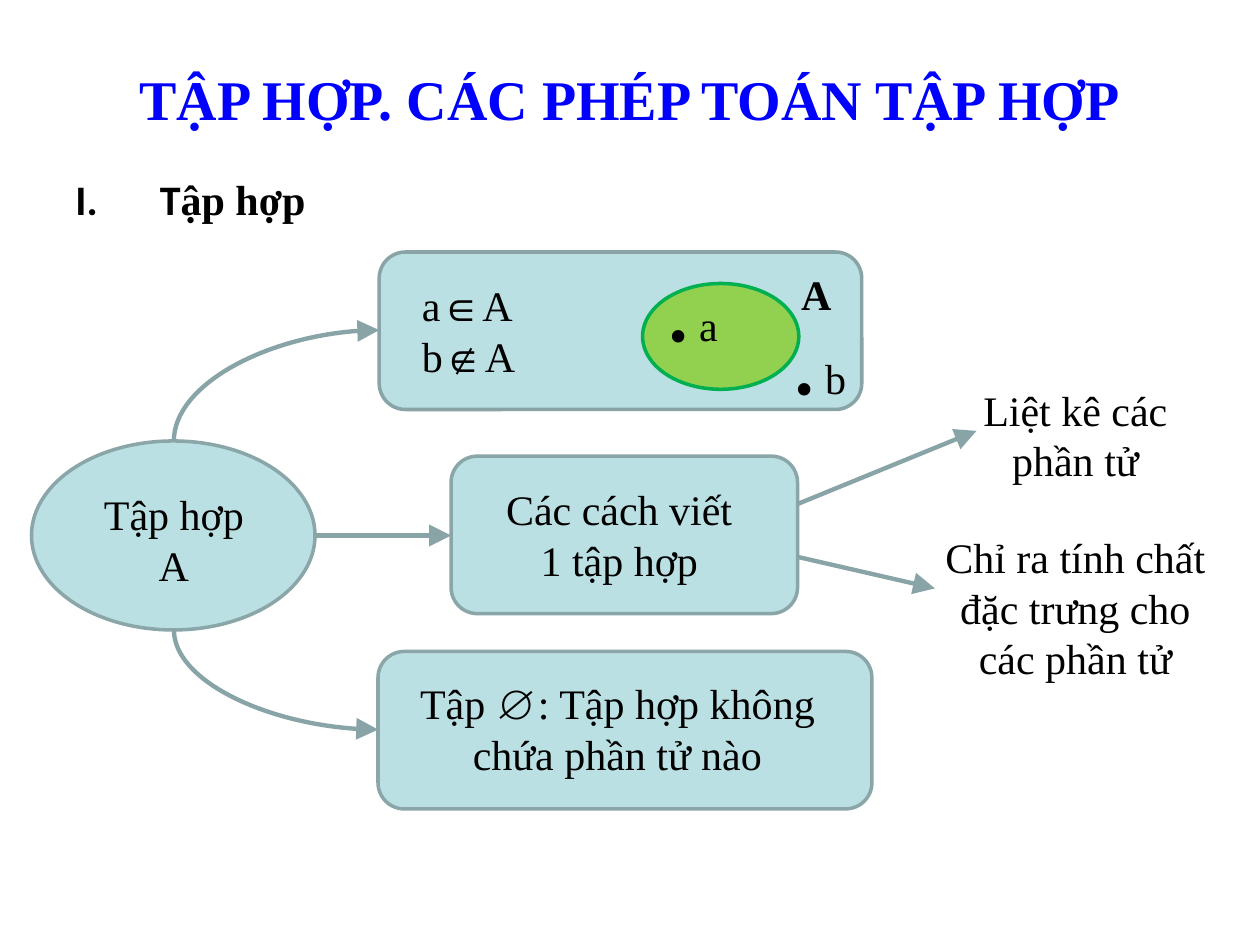
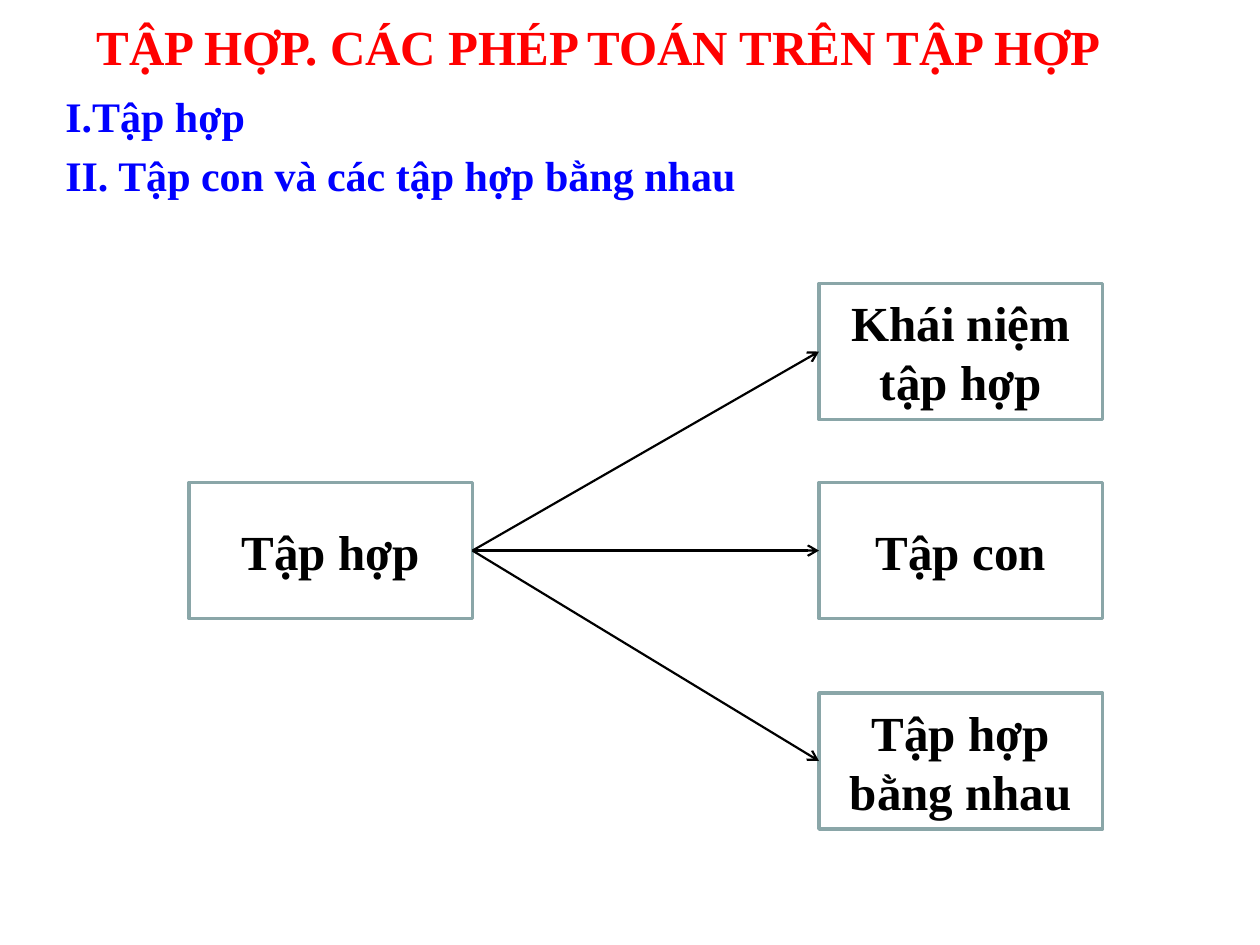
from pptx import Presentation
from pptx import util as u
from pptx.dml.color import RGBColor
from pptx.enum import shapes, text
from pptx.oxml.ns import qn
from lxml import etree

FONT = "Times New Roman"
COLORS = {
    "black": "000000", "blue": "0000FF", "red": "FF0000",
    "pale": "BBE0E3", "edge": "8AA6A8", "arrow": "89A4A7",
    "green": "92D050", "dark_green": "00B050",
}
ROUND = shapes.MSO_SHAPE.ROUNDED_RECTANGLE
OVAL = shapes.MSO_SHAPE.OVAL
RECT = shapes.MSO_SHAPE.RECTANGLE
LEFT, CENTER = text.PP_ALIGN.LEFT, text.PP_ALIGN.CENTER
HANGING = 0.67

# Slide 1: set diagram. Boxes are (left, top, width, height) in inches.
SET_TITLE = "TẬP HỢP. CÁC PHÉP TOÁN TẬP HỢP"
SET_SHAPES = [
    (OVAL, (0.25, 3.5, 2.25, 1.5), "pale", "edge"),
    (ROUND, (3.58, 3.62, 2.75, 1.25), "pale", "edge"),
    (ROUND, (3.01, 2, 3.83, 1.25), "pale", "arrow"),
    (OVAL, (5.1, 2.25, 1.24, 0.84), "green", "dark_green"),
    (ROUND, (3, 5.17, 3.92, 1.25), "pale", "edge"),
]
SET_LABELS = [
    ((0.42, 3.83, 1.92, 0.91), ["Tập hợp", "A"], CENTER),
    ((3.75, 3.79, 2.33, 0.91), ["Các cách viết", "1 tập hợp"], CENTER),
    ((3.25, 2.17, 1.35, 0.91), ["a∈A", "b∉A"], LEFT),
    ((3.04, 5.33, 3.72, 0.91), ["Tập ∅: Tập hợp không chứa phần tử nào"], CENTER),
    ((7.33, 3, 2.41, 0.91), ["Liệt kê các", "phần tử"], CENTER),
    ((7.33, 4.17, 2.41, 1.31),
     ["Chỉ ra tính chất", "đặc trưng cho", "các phần tử"], CENTER),
]
ELEMENTS = [("a", (5.18, 1.83, 0.67, 1.11)), ("b", (6.18, 2.25, 1, 1.11))]
SET_CURVES = [((1.38, 3.5), (3.01, 2.62)), ((1.38, 5), (3, 5.79))]
SET_ARROWS = [
    ((2.5, 4.25), (3.58, 4.25)),
    ((6.33, 4), (7.75, 3.42)),
    ((6.33, 4.42), (7.42, 4.67)),
]

# Slide 2: topic tree
TREE_TITLE = "TẬP HỢP. CÁC PHÉP TOÁN TRÊN TẬP HỢP"
TREE_HEADINGS = ["I.Tập hợp", "II. Tập con và các tập hợp bằng nhau"]
NODE_W, NODE_H = 2.25, 1.08
ROOT = ("Tập hợp", 1.5, 3.83)
BRANCH_LEFT = 6.5
BRANCHES = [("Khái niệm tập hợp", 2.25), ("Tập con", 3.83), ("Tập hợp bằng nhau", 5.5)]


def rgb(name):
    return RGBColor.from_string(COLORS[name])


def inches(values):
    return [u.Inches(v) for v in values]


def add_run(p, words, size=24, color="black", bold=False, font=FONT):
    r = p.add_run()
    r.text = words
    r.font.size, r.font.bold, r.font.name = u.Pt(size), bold, font
    r.font.color.rgb = rgb(color)
    for script in ("a:ea", "a:cs"):  # symbols such as ∈ use these fonts
        etree.SubElement(r._r.get_or_add_rPr(), qn(script), typeface=font)


def write(tf, lines, align=LEFT, hanging=False, **style):
    """Fill a text frame; each line is a string or a list of (words, style) runs."""
    tf.word_wrap = True
    for i, line in enumerate(lines):
        p = tf.add_paragraph() if i else tf.paragraphs[0]
        p.alignment = align
        if hanging:
            p.space_before = u.Pt(round(style.get("size", 24) * 0.2, 1))
            pPr = p._p.get_or_add_pPr()
            pPr.set("marL", str(u.Inches(HANGING)))
            pPr.set("indent", str(-u.Inches(HANGING)))
        runs = [(line, {})] if isinstance(line, str) else line
        for words, extra in runs:
            add_run(p, words, **{**style, **extra})


def add_text(s, box, lines, **style):
    tf = s.shapes.add_textbox(*inches(box)).text_frame
    write(tf, lines, **style)
    return tf


def add_box(s, kind, box, fill, line):
    sp = s.shapes.add_shape(kind, *inches(box))
    sp.shadow.inherit = False
    if fill:
        sp.fill.solid()
        sp.fill.fore_color.rgb = rgb(fill)
    else:
        sp.fill.background()
    sp.line.color.rgb, sp.line.width = rgb(line), u.Pt(2)
    return sp


def add_arrow(s, start, end, color="arrow", width=2.5, head="triangle", head_size="lg"):
    c = s.shapes.add_connector(shapes.MSO_CONNECTOR.STRAIGHT, *inches(start + end))
    c.line.color.rgb, c.line.width = rgb(color), u.Pt(width)
    etree.SubElement(c.line._get_or_add_ln(), qn("a:tailEnd"),
                     type=head, w=head_size, len=head_size)
    etree.SubElement(c._element.spPr, qn("a:effectLst"))
    return c


def add_curve(s, start, end):
    """Quarter curve that leaves vertically and arrives from the left."""
    c = add_arrow(s, start, end)
    (x1, y1), (x2, y2) = start, end
    w, h = abs(y2 - y1), abs(x2 - x1)  # swapped, as the curve is turned sideways
    c.left, c.top, c.width, c.height = inches(
        ((x1 + x2 - w) / 2, (y1 + y2 - h) / 2, w, h))
    upward = y2 < y1
    xfrm = c._element.spPr.find(qn("a:xfrm"))
    xfrm.set("rot", str((90 if upward else 270) * 60000))
    xfrm.set("flipH", "1")
    xfrm.set("flipV", "1" if upward else "0")
    c._element.spPr.find(qn("a:prstGeom")).set("prst", "curvedConnector2")


def build_set_slide(s):
    tf = add_text(s, (0.5, 0.3, 9, 0.95), [SET_TITLE], align=CENTER,
                  size=32, color="blue", bold=True)
    tf.vertical_anchor = text.MSO_ANCHOR.MIDDLE

    heading = [("T", {"font": "Calibri"}), ("ập hợp", {})]
    tf = add_text(s, (0.5, 1.33, 8.92, 0.67), [heading], hanging=True, bold=True)
    pPr = tf.paragraphs[0]._p.get_or_add_pPr()
    etree.SubElement(pPr, qn("a:buFont"), typeface="Calibri")
    etree.SubElement(pPr, qn("a:buAutoNum"), type="romanUcPeriod")

    for kind, box, fill, line in SET_SHAPES:
        add_box(s, kind, box, fill, line)
    for box, lines, align in SET_LABELS:
        add_text(s, box, lines, align=align)
    add_text(s, (6.26, 2.08, 0.51, 0.5), ["A"], bold=True)
    for name, box in ELEMENTS:
        add_text(s, box, [[(".", {"size": 60}), (" ", {"size": 18}), (name, {})]])
    for start, end in SET_CURVES:
        add_curve(s, start, end)
    for start, end in SET_ARROWS:
        add_arrow(s, start, end)


def add_node(s, words, left, top):
    sp = add_box(s, RECT, (left, top, NODE_W, NODE_H), None, "edge")
    write(sp.text_frame, [words], align=CENTER, size=28, bold=True)
    sp.text_frame.vertical_anchor = text.MSO_ANCHOR.MIDDLE


def build_tree_slide(s):
    add_text(s, (0.42, 0.67, 9, 0.92), TREE_HEADINGS, hanging=True,
             color="blue", bold=True)
    add_text(s, (0.25, 0.08, 9, 0.75), [TREE_TITLE], align=CENTER, hanging=True,
             size=28, color="red", bold=True)
    add_node(s, *ROOT)
    _, left, top = ROOT
    start = (left + NODE_W, top + NODE_H / 2)
    for words, branch_top in BRANCHES:
        add_node(s, words, BRANCH_LEFT, branch_top)
        add_arrow(s, start, (BRANCH_LEFT, branch_top + NODE_H / 2),
                  color="black", width=1.25, head="arrow", head_size="med")


def main():
    prs = Presentation()
    prs.slide_width, prs.slide_height = u.Inches(10), u.Inches(7.5)
    for build in (build_set_slide, build_tree_slide):
        build(prs.slides.add_slide(prs.slide_layouts[6]))
    prs.save("out.pptx")


if __name__ == "__main__":
    main()
